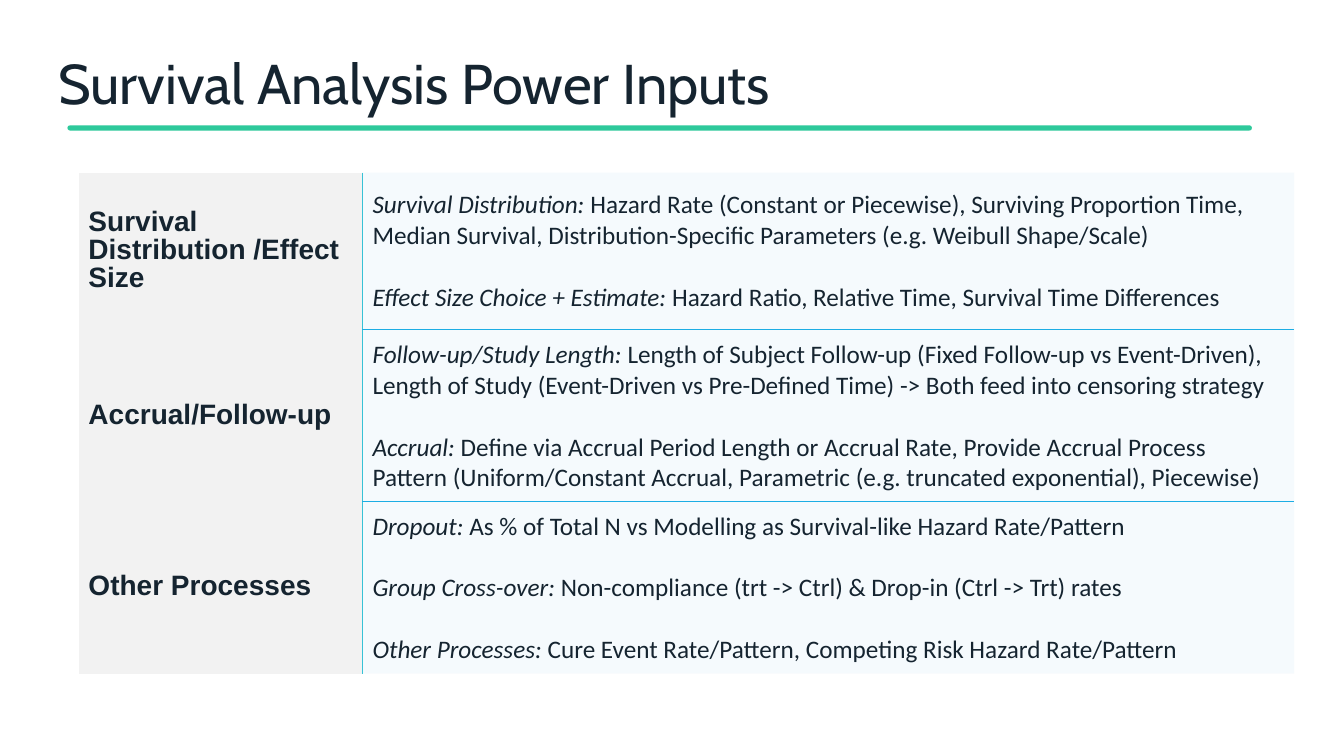
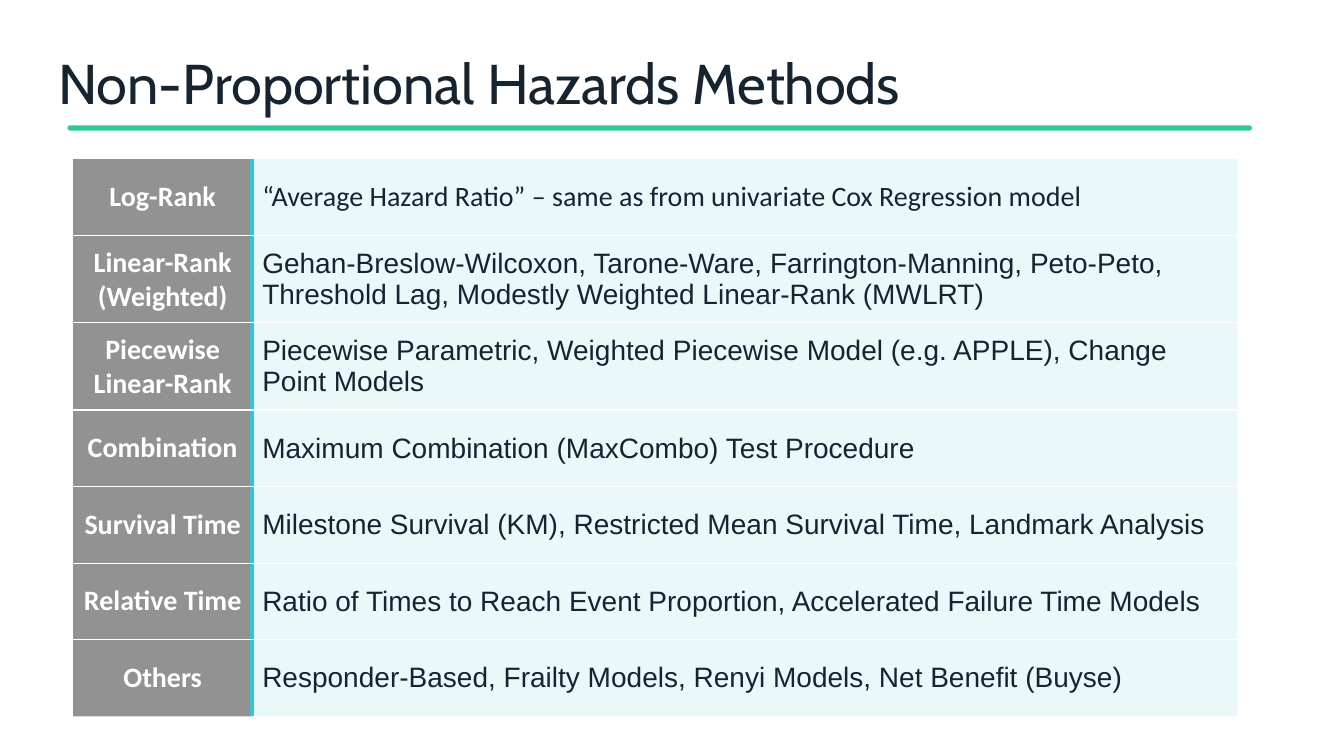
from dataclasses import dataclass, field
from typing import Optional

from lxml import etree
from pptx import Presentation
from pptx.dml.color import RGBColor
from pptx.enum.shapes import MSO_SHAPE as Shape
from pptx.enum.text import MSO_ANCHOR as Anchor, PP_ALIGN as Align
from pptx.oxml.ns import qn
from pptx.util import Cm, Pt

COLORS = {
    "ink": "152430", "white": "FFFFFF", "green": "2EC99B", "teal": "37C2D6",
    "blue": "1CADE4", "light_grey": "F2F2F2", "pale_blue": "D1E7F6",
    "dark": "262626", "pale_teal": "D7F3F7",
}
INSET = Cm(0.25)


@dataclass(frozen=True)
class Text:
    text: str
    italic: bool = False


@dataclass(frozen=True)
class Line:
    color: str
    width: float


@dataclass(frozen=True)
class Style:
    """Look of one table column."""
    fill: str
    alpha: int = 100
    font: str = "Calibri"
    size: int = 20
    color: str = "ink"
    bold: bool = False
    align: Align = Align.LEFT
    spacing: float = 1.0
    gap: int = 0
    rule: Optional[Line] = None


@dataclass(frozen=True)
class Row:
    label: str
    body: list[list[Text]]
    height: float
    body_font: Optional[str] = None


@dataclass(frozen=True)
class Grid:
    left: float
    top: float
    widths: tuple[float, float]
    label: Style
    body: Style
    divider: Line
    rows: list[Row] = field(default_factory=list)


def rgb(name: str) -> RGBColor:
    return RGBColor.from_string(COLORS[name])


def add_run(p, text: str, font: str, size: int, color: str,
            bold: bool = False, italic: bool = False) -> None:
    r = p.add_run()
    r.text = text
    f = r.font
    f.name, f.size, f.bold, f.italic = font, Pt(size), bold, italic
    f.color.rgb = rgb(color)


def new_slide(prs, title: str):
    """Blank slide with the shared title and green rule."""
    s = prs.slides.add_slide(prs.slide_layouts[6])
    bar = s.shapes.add_shape(Shape.ROUNDED_RECTANGLE,
                             Cm(1.7), Cm(3.16), Cm(29.85), Cm(0.13))
    bar.adjustments[0] = 0.5
    bar.shadow.inherit = False
    bar.fill.solid()
    bar.fill.fore_color.rgb = rgb("green")
    bar.line.fill.background()

    tf = s.shapes.add_textbox(Cm(1.47), Cm(0.97), Cm(30.89), Cm(1.98)).text_frame
    tf.word_wrap = True
    tf.vertical_anchor = Anchor.BOTTOM
    tf.margin_left = tf.margin_right = tf.margin_top = tf.margin_bottom = 0
    p = tf.paragraphs[0]
    p.line_spacing = 0.9
    add_run(p, title, "Cabin", 40, "ink")
    return s


def set_borders(cell, lines: dict[str, Optional[Line]]) -> None:
    """Draw the given sides (L, R, T, B) and clear the others."""
    tc_pr = cell._tc.get_or_add_tcPr()
    for i, side in enumerate("LRTB"):
        line = lines.get(side)
        ln = etree.Element(qn(f"a:ln{side}"))
        if line:
            ln.set("w", str(Pt(line.width)))
            fill = etree.SubElement(ln, qn("a:solidFill"))
            etree.SubElement(fill, qn("a:srgbClr"), val=COLORS[line.color])
        else:
            ln.set("w", "0")
            etree.SubElement(ln, qn("a:noFill"))
        tc_pr.insert(i, ln)


def fill_cell(cell, style: Style, paragraphs: list[list[Text]], font: str) -> None:
    cell.fill.solid()
    cell.fill.fore_color.rgb = rgb(style.fill)
    if style.alpha < 100:
        clr = cell._tc.tcPr.find(f"{qn('a:solidFill')}/{qn('a:srgbClr')}")
        etree.SubElement(clr, qn("a:alpha"), val=str(style.alpha * 1000))
    cell.vertical_anchor = Anchor.MIDDLE
    cell.margin_left = cell.margin_right = INSET
    cell.margin_top = cell.margin_bottom = INSET
    tf = cell.text_frame
    for i, runs in enumerate(paragraphs):
        p = tf.add_paragraph() if i else tf.paragraphs[0]
        p.alignment = style.align
        p.line_spacing = style.spacing
        p.space_before = Pt(style.gap if i else 0)
        for t in runs:
            add_run(p, t.text, font, style.size, style.color, style.bold, t.italic)


def add_grid(s, grid: Grid) -> None:
    n = len(grid.rows)
    tbl = s.shapes.add_table(n, 2, Cm(grid.left), Cm(grid.top),
                             Cm(sum(grid.widths)),
                             Cm(sum(r.height for r in grid.rows))).table
    tbl.first_row = tbl.horz_banding = False
    for col, width in zip(tbl.columns, grid.widths):
        col.width = Cm(width)
    for i, row in enumerate(grid.rows):
        tbl.rows[i].height = Cm(row.height)
        columns = (
            (grid.label, [[Text(row.label)]], grid.label.font, "R"),
            (grid.body, row.body, row.body_font or grid.body.font, "L"),
        )
        for j, (style, paragraphs, font, inner) in enumerate(columns):
            cell = tbl.cell(i, j)
            fill_cell(cell, style, paragraphs, font)
            set_borders(cell, {inner: grid.divider,
                               "T": style.rule if i else None,
                               "B": style.rule if i < n - 1 else None})


def topic(name: str, details: str) -> list[Text]:
    return [Text(f"{name}: ", italic=True), Text(details)]


def method(label: str, details: str, font: Optional[str] = None) -> Row:
    return Row(label, [[Text(details)]], 1.93, font)


# Power inputs table
POWER_INPUTS = Grid(
    1.98, 4.35, (7.16, 23.47),
    label=Style("light_grey", font="Arial", bold=True, spacing=0.9),
    body=Style("pale_blue", 20, size=18, gap=22, rule=Line("blue", 1)),
    divider=Line("teal", 1),
    rows=[
        Row("Survival Distribution /Effect Size", [
            topic("Survival Distribution",
                  "Hazard Rate (Constant or Piecewise), Surviving Proportion Time, "
                  "Median Survival, Distribution-Specific Parameters "
                  "(e.g. Weibull Shape/Scale)"),
            topic("Effect Size Choice + Estimate",
                  "Hazard Ratio, Relative Time, Survival Time Differences"),
        ], 3.96),
        Row("Accrual/Follow-up", [
            topic("Follow-up/Study Length",
                  "Length of Subject Follow-up (Fixed Follow-up vs Event-Driven), "
                  "Length of Study (Event-Driven vs Pre-Defined Time) -> "
                  "Both feed into censoring strategy"),
            topic("Accrual",
                  "Define via Accrual Period Length or Accrual Rate, Provide Accrual "
                  "Process Pattern (Uniform/Constant Accrual, Parametric "
                  "(e.g. truncated exponential), Piecewise)"),
        ], 4.14),
        Row("Other Processes", [
            topic("Dropout",
                  "As % of Total N vs Modelling as Survival-like Hazard Rate/Pattern"),
            topic("Group Cross-over",
                  "Non-compliance (trt -> Ctrl) & Drop-in (Ctrl -> Trt) rates"),
            topic("Other Processes",
                  "Cure Event Rate/Pattern, Competing Risk Hazard Rate/Pattern"),
        ], 4.14),
    ],
)

# Methods table
WHITE_RULE = Line("white", 1)
METHODS = Grid(
    1.84, 4.01, (4.52, 24.82),
    label=Style("dark", 50, color="white", bold=True, align=Align.CENTER,
                rule=WHITE_RULE),
    body=Style("pale_teal", 50, font="Arial", rule=WHITE_RULE),
    divider=Line("teal", 3),
    rows=[
        method("Log-Rank", "“Average Hazard Ratio” – same as from univariate "
               "Cox Regression model", "Calibri"),
        method("Linear-Rank (Weighted)",
               "Gehan-Breslow-Wilcoxon, Tarone-Ware, Farrington-Manning, Peto-Peto, "
               "Threshold Lag, Modestly Weighted Linear-Rank (MWLRT)"),
        method("Piecewise Linear-Rank",
               "Piecewise Parametric, Weighted Piecewise Model (e.g. APPLE), "
               "Change Point Models"),
        method("Combination", "Maximum Combination (MaxCombo) Test Procedure"),
        method("Survival Time", "Milestone Survival (KM), Restricted Mean Survival "
               "Time, Landmark Analysis"),
        method("Relative Time", "Ratio of Times to Reach Event Proportion, "
               "Accelerated Failure Time Models"),
        method("Others", "Responder-Based, Frailty Models, Renyi Models, "
               "Net Benefit (Buyse)"),
    ],
)


def main() -> None:
    prs = Presentation()
    prs.slide_width, prs.slide_height = Cm(33.87), Cm(19.05)
    for title, grid in (("Survival Analysis Power Inputs", POWER_INPUTS),
                        ("Non-Proportional Hazards Methods", METHODS)):
        add_grid(new_slide(prs, title), grid)
    prs.save("out.pptx")


if __name__ == "__main__":
    main()
